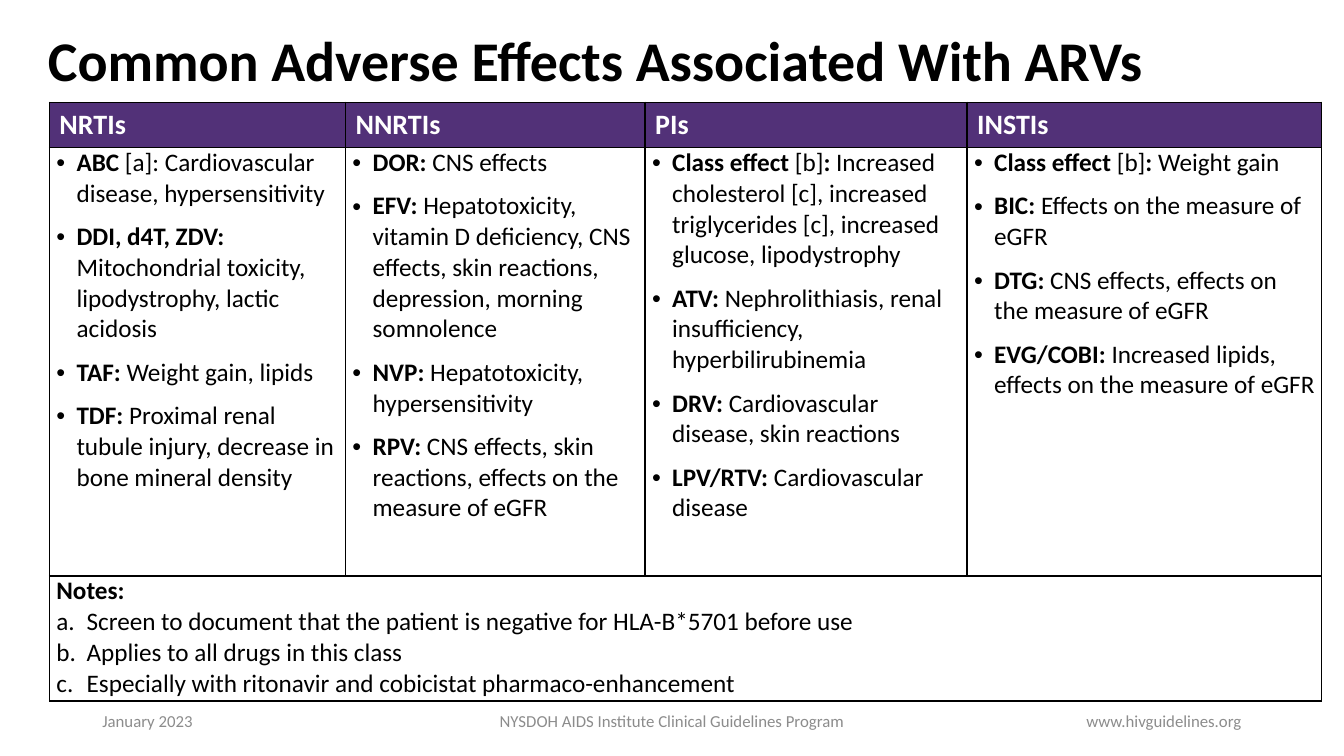
from dataclasses import dataclass

from lxml.etree import SubElement
from pptx import Presentation
from pptx.dml.color import RGBColor
from pptx.enum.text import MSO_ANCHOR, MSO_AUTO_SIZE, PP_ALIGN
from pptx.oxml.ns import qn
from pptx.slide import Slide
from pptx.table import Table, _Cell
from pptx.text.text import Font, _Paragraph
from pptx.util import Pt

FONT = "Calibri"
COLORS = {
    "text": "000000",
    "border": "000000",
    "header": "523178",
    "header_text": "FFFFFF",
    "body": "FFFFFF",
    "footer": "8C8C8C",
}
BOLD_MARK = "|"


@dataclass(frozen=True)
class DrugClass:
    name: str
    width: float
    effects: tuple[str, ...]


@dataclass(frozen=True)
class FooterItem:
    text: str
    left: float
    width: float
    align: PP_ALIGN


@dataclass(frozen=True)
class ListStyle:
    indent: float
    tag: str
    attribute: str
    value: str
    before: float = 0
    after: float = 0


EFFECT_LIST = ListStyle(14.4, "a:buChar", "char", "•", 3, 6)
NOTE_LIST = ListStyle(21.6, "a:buAutoNum", "type", "alphaLcPeriod")

DRUG_CLASSES = (
    DrugClass("NRTIs", 211.5, (
        "ABC| [a]: Cardiovascular disease, hypersensitivity",
        "DDI, d4T, ZDV: |Mitochondrial toxicity, lipodystrophy, lactic acidosis",
        "TAF: |Weight gain, lipids",
        "TDF: |Proximal renal tubule injury, decrease in bone mineral density",
    )),
    DrugClass("NNRTIs", 214, (
        "DOR: |CNS effects",
        "EFV: |Hepatotoxicity, vitamin D deficiency, CNS effects, "
        "skin reactions, depression, morning somnolence",
        "NVP: |Hepatotoxicity, hypersensitivity",
        "RPV: |CNS effects, skin reactions, effects on the measure of eGFR",
    )),
    DrugClass("PIs", 230, (
        "Class effect |[b]|:| Increased cholesterol [c], increased "
        "triglycerides [c], increased glucose, lipodystrophy",
        "ATV: |Nephrolithiasis, renal insufficiency, hyperbilirubinemia",
        "DRV: |Cardiovascular disease, skin reactions",
        "LPV/RTV: |Cardiovascular disease",
    )),
    DrugClass("INSTIs", 253.5, (
        "Class effect |[b]|:| Weight gain",
        "BIC: |Effects on the measure of eGFR",
        "DTG: |CNS effects, effects on the measure of eGFR",
        "EVG/COBI: |Increased lipids, effects on the measure of eGFR",
    )),
)
NOTES = (
    "Screen to document that the patient is negative for HLA-B*5701 before use",
    "Applies to all drugs in this class",
    "Especially with ritonavir and cobicistat pharmaco-enhancement",
)
FOOTER = (
    FooterItem("January 2023", 66, 216, PP_ALIGN.LEFT),
    FooterItem("NYSDOH AIDS Institute Clinical Guidelines Program", 318, 324,
               PP_ALIGN.CENTER),
    FooterItem("www.hivguidelines.org", 678, 216, PP_ALIGN.RIGHT),
)
ROW_HEIGHTS = (32.4, 306, 89.3)


def style_font(font: Font, size: float, color: str, bold: bool = False) -> None:
    font.name = FONT
    font.size = Pt(size)
    font.bold = bold
    font.color.rgb = RGBColor.from_string(COLORS[color])


def add_title(slide: Slide, text: str) -> None:
    title = slide.shapes.title
    title.left, title.top, title.width, title.height = map(Pt, (27, 18, 828, 55))
    frame = title.text_frame
    frame.text = text
    frame.auto_size = MSO_AUTO_SIZE.NONE
    frame.vertical_anchor = MSO_ANCHOR.MIDDLE
    heading = frame.paragraphs[0]
    heading.alignment = PP_ALIGN.LEFT
    heading.line_spacing = 0.9
    style_font(heading.runs[0].font, 40, "text", True)


def add_footer_item(slide: Slide, item: FooterItem) -> None:
    box = slide.shapes.add_textbox(Pt(item.left), Pt(500.5), Pt(item.width), Pt(28.8))
    frame = box.text_frame
    frame.word_wrap = True
    frame.vertical_anchor = MSO_ANCHOR.MIDDLE
    frame.text = item.text
    line = frame.paragraphs[0]
    line.alignment = item.align
    style_font(line.runs[0].font, 12, "footer")


def style_cell(cell: _Cell, fill: str) -> None:
    properties = cell._tc.get_or_add_tcPr()
    for side in ("a:lnL", "a:lnR", "a:lnT", "a:lnB"):
        border = SubElement(properties, qn(side), w=str(Pt(1)))
        solid = SubElement(border, qn("a:solidFill"))
        SubElement(solid, qn("a:srgbClr"), val=COLORS["border"])
    cell.fill.solid()
    cell.fill.fore_color.rgb = RGBColor.from_string(COLORS[fill])


def style_list_item(item: _Paragraph, style: ListStyle, first: bool) -> None:
    properties = item._p.get_or_add_pPr()
    properties.set("marL", str(Pt(style.indent)))
    properties.set("indent", str(-Pt(style.indent)))
    if style.tag == "a:buChar":
        SubElement(properties, qn("a:buFont"), typeface="Arial")
    SubElement(properties, qn(style.tag)).set(style.attribute, style.value)
    item.space_before = Pt(0 if first else style.before)
    item.space_after = Pt(style.after)


def write_marked_text(line: _Paragraph, marked: str) -> None:
    for index, part in enumerate(marked.split(BOLD_MARK)):
        if part:
            run = line.add_run()
            run.text = part
            style_font(run.font, 18, "text", index % 2 == 0)


def fill_list(cell: _Cell, items: tuple[str, ...], style: ListStyle,
              heading: str = "") -> None:
    cell.margin_left = cell.margin_right = Pt(5)
    cell.margin_top = cell.margin_bottom = Pt(0)
    frame = cell.text_frame
    if heading:
        write_marked_text(frame.paragraphs[0], heading)
    for index, text in enumerate(items):
        first = index == 0 and not heading
        line = frame.paragraphs[0] if first else frame.add_paragraph()
        style_list_item(line, style, first)
        write_marked_text(line, text)


def fill_header(cell: _Cell, name: str) -> None:
    cell.text_frame.text = name
    cell.vertical_anchor = MSO_ANCHOR.MIDDLE
    style_font(cell.text_frame.paragraphs[0].runs[0].font, 20, "header_text", True)


def add_effects_table(slide: Slide) -> Table:
    width = sum(drug_class.width for drug_class in DRUG_CLASSES)
    table = slide.shapes.add_table(
        len(ROW_HEIGHTS), len(DRUG_CLASSES),
        Pt(35.3), Pt(73), Pt(width), Pt(sum(ROW_HEIGHTS))).table
    table.horz_banding = False
    for row, height in zip(table.rows, ROW_HEIGHTS):
        row.height = Pt(height)
    for column, drug_class in enumerate(DRUG_CLASSES):
        table.columns[column].width = Pt(drug_class.width)
        for row in range(len(ROW_HEIGHTS)):
            style_cell(table.cell(row, column), "body" if row else "header")
        fill_header(table.cell(0, column), drug_class.name)
        fill_list(table.cell(1, column), drug_class.effects, EFFECT_LIST)
    notes = table.cell(2, 0)
    notes.merge(table.cell(2, len(DRUG_CLASSES) - 1))
    fill_list(notes, tuple(BOLD_MARK + note for note in NOTES), NOTE_LIST, "Notes:")
    return table


def main() -> None:
    deck = Presentation()
    deck.slide_width, deck.slide_height = Pt(960), Pt(540)
    slide = deck.slides.add_slide(deck.slide_layouts[5])
    add_title(slide, "Common Adverse Effects Associated With ARVs")
    for item in FOOTER:
        add_footer_item(slide, item)
    add_effects_table(slide)
    deck.save("out.pptx")


if __name__ == "__main__":
    main()
